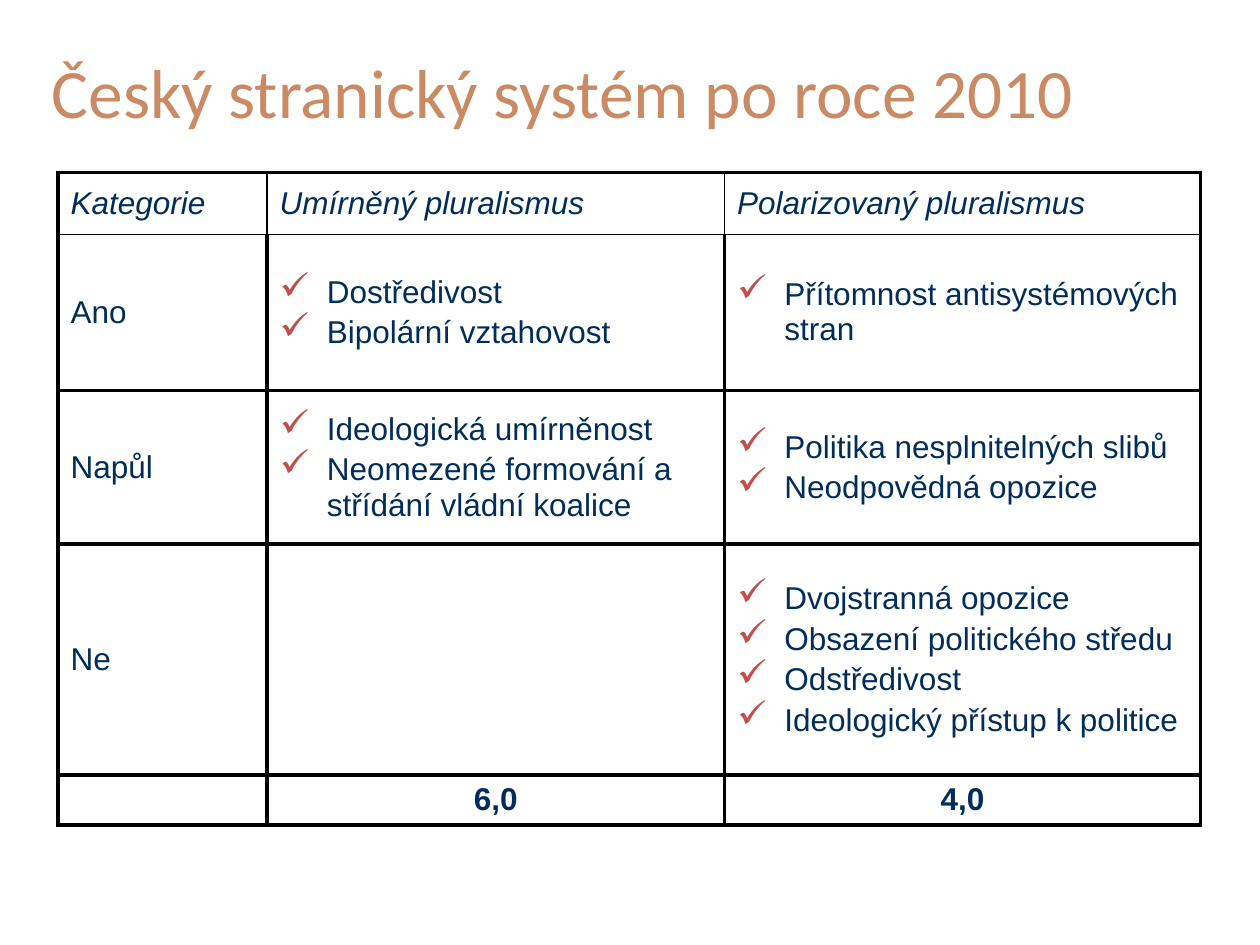
from dataclasses import dataclass

from lxml.etree import SubElement
from pptx import Presentation
from pptx.dml.color import RGBColor
from pptx.enum.text import MSO_ANCHOR as Anchor, MSO_AUTO_SIZE as AutoSize, PP_ALIGN as Align
from pptx.oxml.ns import qn
from pptx.util import Pt


@dataclass(frozen=True)
class Theme:
    title_color: str = "CA8A64"
    text_color: str = "002D5A"
    check_color: str = "C0504D"
    border_color: str = "000000"
    title_font: str = "Calibri"
    text_font: str = "Arial"
    title_size: float = 39.6
    text_size: float = 18
    thick: float = 2.25
    thin: float = 1


THEME = Theme()
TITLE = "Český stranický systém po roce 2010"
TITLE_BOX = (22.3, 36, 665.3, 31.7)
TABLE_BOX = (33.1, 98.6, 653, 373)
COLUMN_WIDTHS = (119.5, 261.4, 272.1)
ROW_HEIGHTS = (35.3, 89.3, 87.8, 131.8, 28.8)

# A string is plain text; a list holds check-marked items.
ROWS = (
    ("Kategorie", "Umírněný pluralismus", "Polarizovaný pluralismus"),
    ("Ano", ["Dostředivost", "Bipolární vztahovost"],
     ["Přítomnost antisystémových stran"]),
    ("Napůl", ["Ideologická umírněnost", "Neomezené formování a střídání vládní koalice"],
     ["Politika nesplnitelných slibů", "Neodpovědná opozice"]),
    ("Ne", "", ["Dvojstranná opozice", "Obsazení politického středu",
                "Odstředivost", "Ideologický přístup k politice"]),
    ("", "6,0", "4,0"),
)


def set_font(para, name, size, color):
    para.font.name = name
    para.font.size = Pt(size)
    para.font.color.rgb = RGBColor.from_string(color)


def add_check_mark(para):
    props = para._p.get_or_add_pPr()
    props.set("marL", str(Pt(27)))
    props.set("indent", str(Pt(-27)))
    color = SubElement(props, qn("a:buClr"))
    SubElement(color, qn("a:srgbClr"), val=THEME.check_color)
    SubElement(props, qn("a:buSzPct"), val="120000")
    SubElement(props, qn("a:buChar"), char="✓")
    para.space_before = Pt(3)


def set_borders(cell, widths):
    """Draw the left, right, top and bottom borders with the given widths."""
    props = cell._tc.get_or_add_tcPr()
    for side, width in zip("LRTB", widths):
        line = SubElement(props, qn(f"a:ln{side}"), w=str(Pt(width)))
        fill = SubElement(line, qn("a:solidFill"))
        SubElement(fill, qn("a:srgbClr"), val=THEME.border_color)


def border_widths(row, column):
    """Thin lines separate the header cells and underline them; the rest is thick."""
    thick, thin = THEME.thick, THEME.thin
    if row == 0:
        return (thin if column > 0 else thick,
                thin if column < len(COLUMN_WIDTHS) - 1 else thick,
                thick, thin)
    return thick, thick, thin if row == 1 else thick, thick


def fill_cell(cell, content, row):
    cell.vertical_anchor = Anchor.MIDDLE
    checked = isinstance(content, list)
    items = content if checked else [content]
    frame = cell.text_frame
    frame.text = "\n".join(items)
    for para in frame.paragraphs:
        if checked:
            add_check_mark(para)
        set_font(para, THEME.text_font, THEME.text_size, THEME.text_color)
        if row == 0:
            para.font.italic = True
        elif row == len(ROWS) - 1:
            para.font.bold = True
            para.alignment = Align.CENTER


def place_title(page, box):
    title = page.shapes.title
    title.left, title.top, title.width, title.height = map(Pt, box)
    frame = title.text_frame
    frame.text = TITLE
    frame.auto_size = AutoSize.NONE
    frame.vertical_anchor = Anchor.MIDDLE
    para = frame.paragraphs[0]
    para.alignment = Align.LEFT
    set_font(para, THEME.title_font, THEME.title_size, THEME.title_color)


def place_table(page, box):
    table = page.shapes.add_table(len(ROWS), len(COLUMN_WIDTHS), *map(Pt, box)).table
    table.first_row = table.horz_banding = False
    for column, width in zip(table.columns, COLUMN_WIDTHS):
        column.width = Pt(width)
    for row, height in zip(table.rows, ROW_HEIGHTS):
        row.height = Pt(height)
    for row, contents in enumerate(ROWS):
        for column, content in enumerate(contents):
            cell = table.cell(row, column)
            fill_cell(cell, content, row)
            set_borders(cell, border_widths(row, column))
            cell.fill.background()


def main():
    deck = Presentation()
    deck.slide_width, deck.slide_height = Pt(720), Pt(540)
    page = deck.slides.add_slide(deck.slide_layouts[5])
    place_title(page, TITLE_BOX)
    place_table(page, TABLE_BOX)
    deck.save("out.pptx")


if __name__ == "__main__":
    main()
